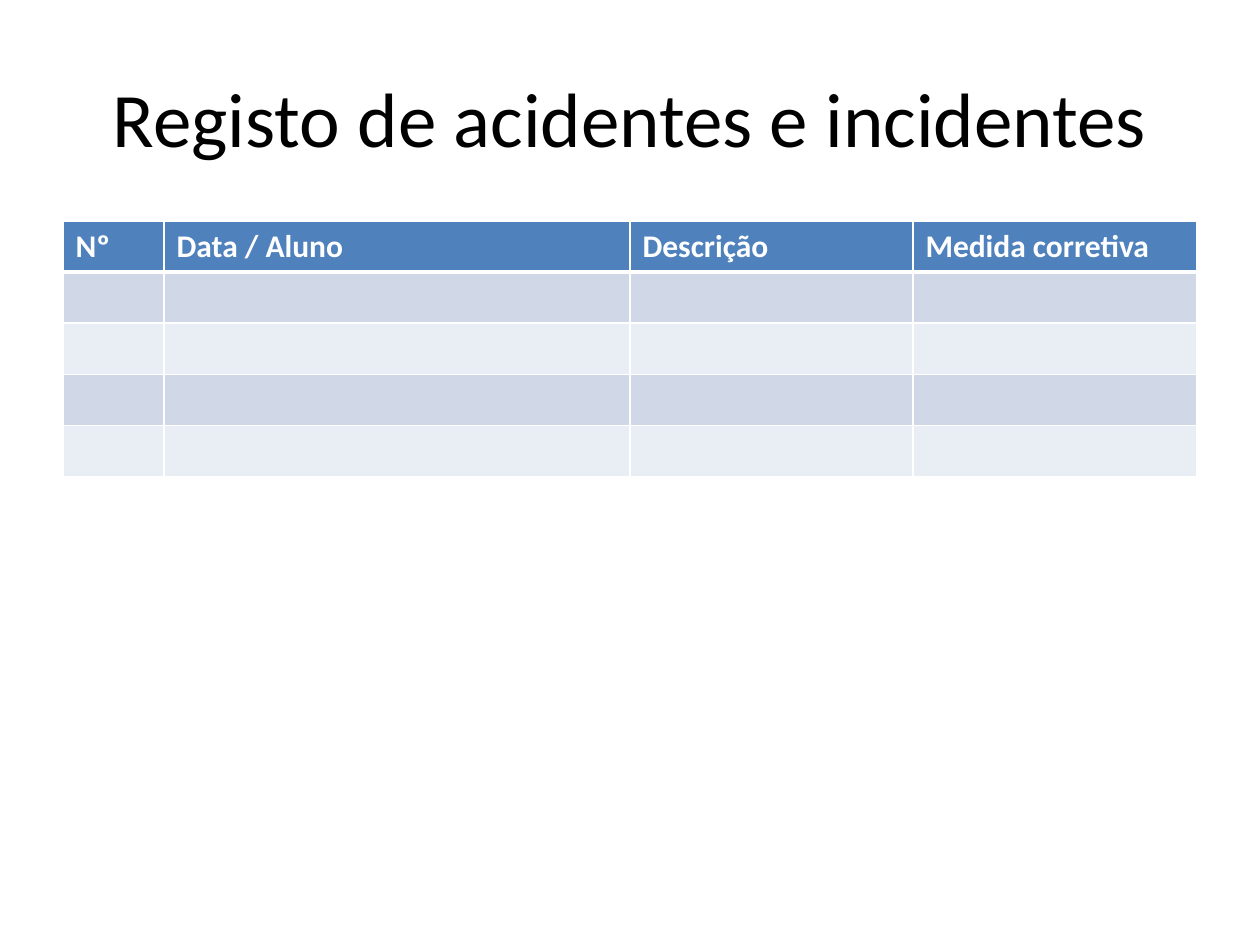
from lxml.etree import SubElement
from pptx import Presentation
from pptx.dml.color import RGBColor
from pptx.enum.text import MSO_ANCHOR, PP_ALIGN
from pptx.oxml.ns import qn
from pptx.util import Emu, Pt

BLACK = RGBColor(0x00, 0x00, 0x00)
WHITE = RGBColor(0xFF, 0xFF, 0xFF)
HEADER_BLUE = RGBColor(0x4F, 0x81, 0xBD)
BAND_DARK = RGBColor(0xD0, 0xD8, 0xE8)
BAND_LIGHT = RGBColor(0xE9, 0xED, 0xF4)
FONT = "Calibri"
HEADINGS = ["Nº", "Data / Aluno", "Descrição", "Medida corretiva"]
COLUMN_WIDTHS = [101, 466, 283, 284]
ROW_COUNT = 5
ROW_HEIGHT = 51


def px(length):
    return Emu(round(length * 914400 / 126))


def add_text(paragraph, text, size, color, bold=False):
    run = paragraph.add_run()
    run.text = text
    run.font.name = FONT
    run.font.size = Pt(size)
    run.font.bold = bold
    run.font.color.rgb = color


prs = Presentation()
prs.slide_width, prs.slide_height = px(1260), px(945)
slide = prs.slides.add_slide(prs.slide_layouts[5])

title = slide.shapes.title
title.left, title.top, title.width, title.height = px(63), px(38), px(1134), px(157)
title.text_frame.vertical_anchor = MSO_ANCHOR.MIDDLE
heading = title.text_frame.paragraphs[0]
heading.alignment = PP_ALIGN.CENTER
add_text(heading, "Registo de acidentes e incidentes", 44, BLACK)

register = slide.shapes.add_table(
    ROW_COUNT, len(HEADINGS), px(63), px(221),
    px(sum(COLUMN_WIDTHS)), px(ROW_COUNT * ROW_HEIGHT),
).table
for column, width in zip(register.columns, COLUMN_WIDTHS):
    column.width = px(width)

for row_index, row in enumerate(register.rows):
    row.height = px(ROW_HEIGHT)
    for cell, label in zip(row.cells, HEADINGS):
        borders = {"a:lnL": 1, "a:lnR": 1, "a:lnT": 1, "a:lnB": 1}
        if row_index == 0:
            fill_color = HEADER_BLUE
            borders["a:lnB"] = 3
            add_text(cell.text_frame.paragraphs[0], label, 18, WHITE, True)
        else:
            fill_color = BAND_DARK if row_index % 2 else BAND_LIGHT
            if row_index == 1:
                borders["a:lnT"] = 3
        properties = cell._tc.get_or_add_tcPr()
        for side, weight in borders.items():
            line = SubElement(properties, qn(side), w=str(Pt(weight)))
            SubElement(SubElement(line, qn("a:solidFill")), qn("a:srgbClr"), val=str(WHITE))
        cell.fill.solid()
        cell.fill.fore_color.rgb = fill_color

prs.save("out.pptx")
